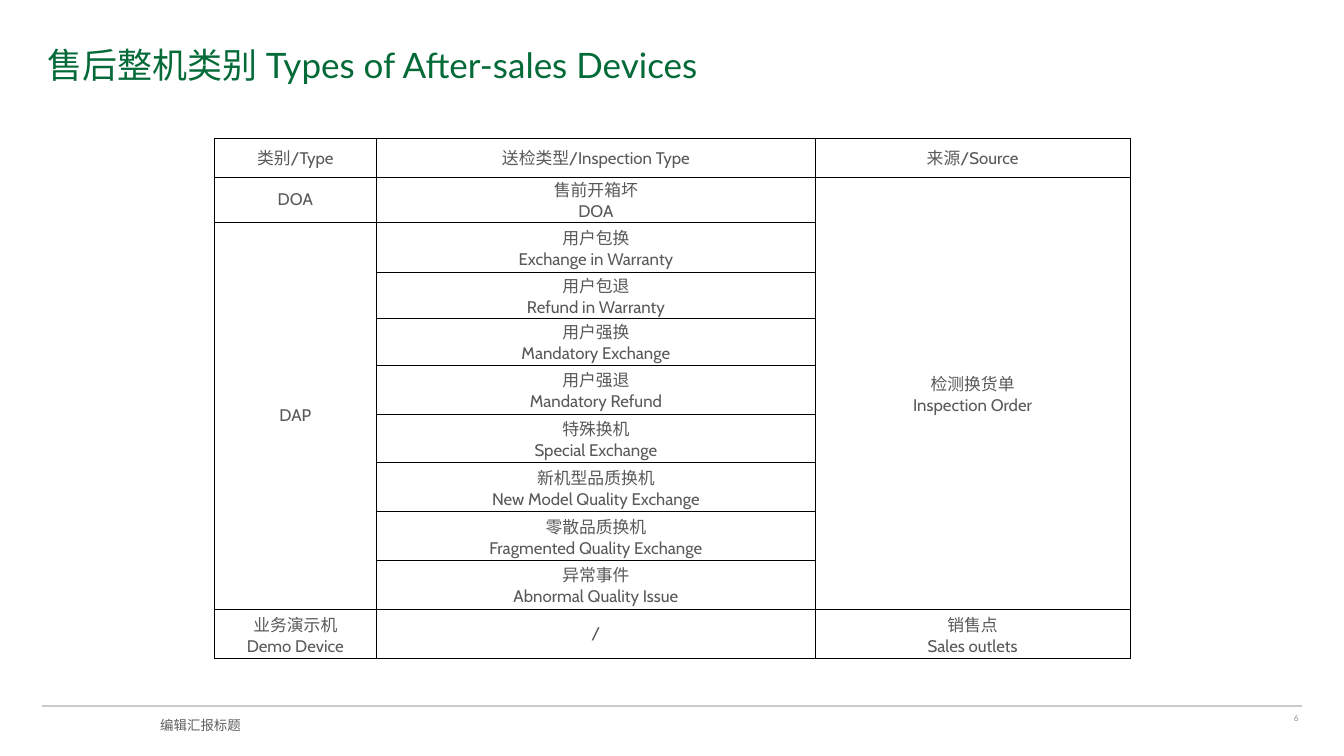
from dataclasses import dataclass

from lxml.etree import SubElement
from pptx import Presentation
from pptx.dml.color import RGBColor
from pptx.enum.shapes import MSO_CONNECTOR
from pptx.enum.text import MSO_ANCHOR, MSO_AUTO_SIZE, PP_ALIGN
from pptx.oxml import parse_xml
from pptx.oxml.ns import nsdecls, qn
from pptx.util import Inches, Pt


@dataclass(frozen=True)
class Theme:
    """Hold the colours, fonts and type sizes of the slide."""
    green: str = "046A38"
    body: str = "595959"
    footer: str = "5E5E5E"
    number: str = "929292"
    rule: str = "CACAC8"
    border: str = "000000"
    heading_font: str = "Lato"
    body_font: str = "Cabin"
    title_size: float = 50
    table_size: float = 24
    footer_size: float = 19.2
    number_size: float = 12
    rule_width: float = 2
    border_width: float = 0.5


THEME = Theme()
COLUMN_WIDTHS = [3.22, 8.71, 6.24]
ROW_HEIGHTS = [0.77, 0.89, 1, 0.91, 0.93] + [0.97] * 5 + [0.98]
HEADINGS = ["类别/Type", "送检类型/Inspection Type", "来源/Source"]
INSPECTIONS = [
    "售前开箱坏\nDOA",
    "用户包换\nExchange in Warranty",
    "用户包退\nRefund in Warranty",
    "用户强换\nMandatory Exchange",
    "用户强退\nMandatory Refund",
    "特殊换机\nSpecial Exchange",
    "新机型品质换机\nNew Model Quality Exchange",
    "零散品质换机\nFragmented Quality Exchange",
    "异常事件\nAbnormal Quality Issue",
    "/",
]
TYPES = {1: "DOA", 2: "DAP", 10: "业务演示机\nDemo Device"}
SOURCES = {1: "检测换货单\nInspection Order", 10: "销售点\nSales outlets"}
MERGES = [((2, 0), (9, 0)), ((1, 2), (9, 2))]


def apply_format(target, values):
    """Set every attribute named in values on target."""
    for name, value in values.items():
        setattr(target, name, value)


def write(frame, text, font, size, color, **paragraph_format):
    """Fill a text frame with one formatted paragraph per line of text."""
    frame.text = text
    for paragraph in frame.paragraphs:
        apply_format(paragraph, paragraph_format)
        for run in paragraph.runs:
            apply_format(run.font, {"name": font, "size": Pt(size), "bold": False})
            run.font.color.rgb = RGBColor.from_string(color)


def place(shape, box):
    """Move and size a shape to a box given in inches."""
    apply_format(shape, dict(zip(("left", "top", "width", "height"), map(Inches, box))))


def draw_title(title, box):
    """Place the slide title."""
    place(title, box)
    write(title.text_frame, "售后整机类别 Types of After-sales Devices", THEME.heading_font,
          THEME.title_size, THEME.green, alignment=PP_ALIGN.LEFT)
    apply_format(title.text_frame, {"auto_size": MSO_AUTO_SIZE.NONE,
                                    "vertical_anchor": MSO_ANCHOR.MIDDLE})


def draw_footer(slide, report_title, box):
    """Place the rule, the report title and the page number in the footer box."""
    left, top, width, height = box
    rule = slide.shapes.add_connector(MSO_CONNECTOR.STRAIGHT, Inches(left), Inches(top),
                                      Inches(left + width), Inches(top))
    rule.line.color.rgb = RGBColor.from_string(THEME.rule)
    rule.line.width = Pt(THEME.rule_width)
    SubElement(rule.element.spPr, qn("a:effectLst"))

    place(report_title, (left + 2.24, top + 0.07, 9.34, height - 0.07))
    write(report_title.text_frame, "编辑汇报标题", THEME.body_font, THEME.footer_size,
          THEME.footer, line_spacing=1.3, space_before=Pt(0))
    report_title.text_frame.auto_size = MSO_AUTO_SIZE.NONE
    properties = report_title.text_frame.paragraphs[0]._p.get_or_add_pPr()
    properties.set("marL", "0")
    properties.set("indent", "0")
    SubElement(properties, qn("a:buNone"))

    number_box = (left + width - 2.99, top + 0.07, 2.99, 0.31)
    page_number = slide.shapes.add_textbox(*map(Inches, number_box)).text_frame
    margins = ("margin_left", "margin_top", "margin_right", "margin_bottom")
    apply_format(page_number, dict.fromkeys(margins, Inches(0.06)) | {"word_wrap": True})
    write(page_number, "6", THEME.heading_font, THEME.number_size, THEME.number,
          alignment=PP_ALIGN.RIGHT)


def style_cell(cell):
    """Clear a cell's fill and margins, centre it and draw its four borders."""
    cell.fill.background()
    apply_format(cell, {"margin_left": 0, "margin_top": 0, "margin_right": 0,
                        "margin_bottom": 0, "vertical_anchor": MSO_ANCHOR.MIDDLE})
    properties = cell._tc.get_or_add_tcPr()
    for index, side in enumerate("LRTB"):
        properties.insert(index, parse_xml(
            f'<a:ln{side} {nsdecls("a")} w="{Pt(THEME.border_width)}"><a:solidFill>'
            f'<a:srgbClr val="{THEME.border}"/></a:solidFill></a:ln{side}>'))


def draw_device_table(slide, box):
    """Build the table of device types, inspections and sources."""
    devices = slide.shapes.add_table(len(ROW_HEIGHTS), len(COLUMN_WIDTHS),
                                     *map(Inches, box)).table
    apply_format(devices, {"first_row": False, "horz_banding": False})
    for column, width in zip(devices.columns, COLUMN_WIDTHS):
        column.width = Inches(width)
    for row, height in zip(devices.rows, ROW_HEIGHTS):
        row.height = Inches(height)
    for cell in devices.iter_cells():
        style_cell(cell)
    for first, last in MERGES:
        devices.cell(*first).merge(devices.cell(*last))

    entries = {(0, column): heading for column, heading in enumerate(HEADINGS)}
    entries |= {(row, 0): device for row, device in TYPES.items()}
    entries |= {(row, 1): inspection for row, inspection in enumerate(INSPECTIONS, 1)}
    entries |= {(row, 2): source for row, source in SOURCES.items()}
    for position, text in entries.items():
        write(devices.cell(*position).text_frame, text, THEME.body_font,
              THEME.table_size, THEME.body, alignment=PP_ALIGN.CENTER)


def main():
    """Build and save the slide."""
    deck = Presentation()
    apply_format(deck, {"slide_width": Inches(26.67), "slide_height": Inches(15)})
    slide = deck.slides.add_slide(deck.slide_layouts[1])
    title, report_title = slide.placeholders
    draw_title(title, (0.85, 0.69, 24.98, 1.17))
    draw_footer(slide, report_title, (0.84, 14.01, 24.99, 0.61))
    draw_device_table(slide, (4.25, 2.74, sum(COLUMN_WIDTHS), sum(ROW_HEIGHTS)))
    deck.save("out.pptx")


if __name__ == "__main__":
    main()
